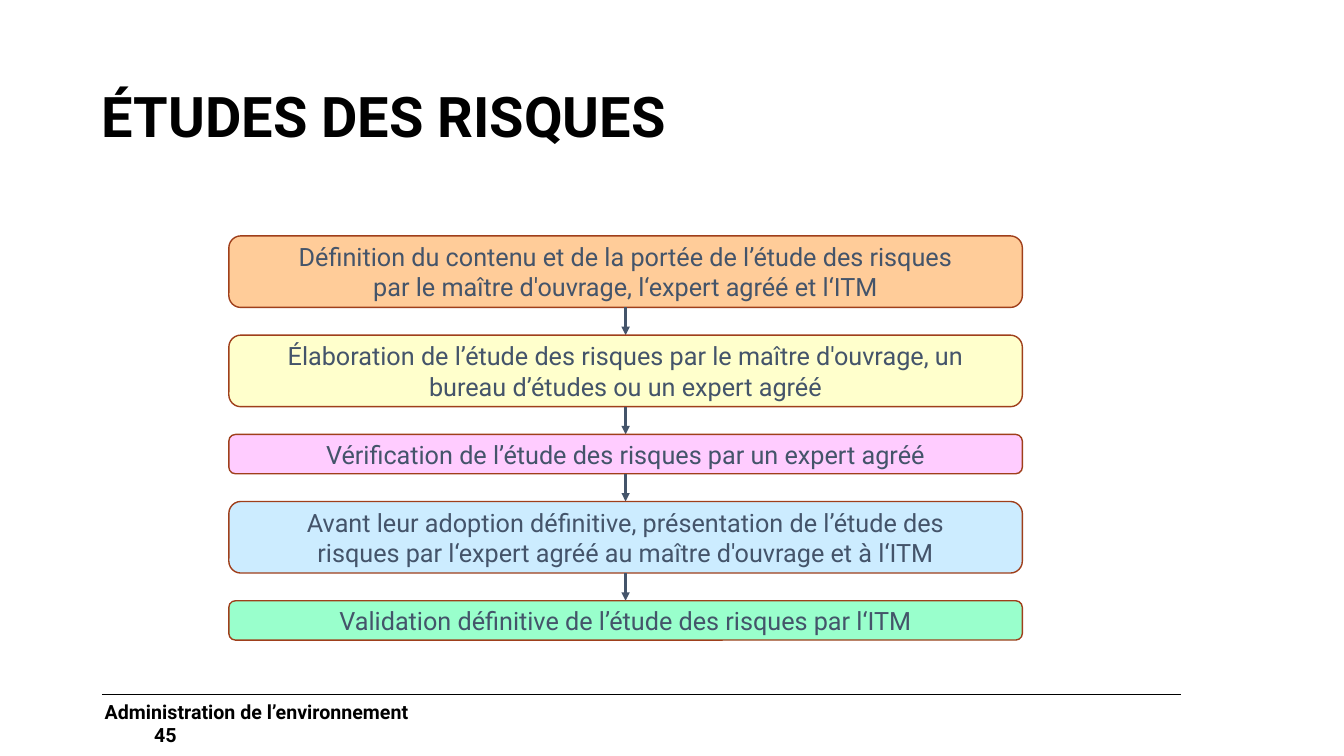
import pptx
import pptx.util
import pptx.dml.color
import pptx.enum.shapes
import pptx.enum.text
import pptx.oxml.ns
import lxml.etree

Inches, Pt = pptx.util.Inches, pptx.util.Pt
RGBColor = pptx.dml.color.RGBColor
qn = pptx.oxml.ns.qn

BLACK = RGBColor(0x00, 0x00, 0x00)
SLATE = RGBColor(0x44, 0x54, 0x6A)
RUST = RGBColor(0x9F, 0x3F, 0x1B)
ORANGE = RGBColor(0xFF, 0xCC, 0x99)
YELLOW = RGBColor(0xFF, 0xFF, 0xCC)
PINK = RGBColor(0xFF, 0xCC, 0xFF)
BLUE = RGBColor(0xCC, 0xEC, 0xFF)
GREEN = RGBColor(0x99, 0xFF, 0xCC)

STEP_LEFT, STEP_WIDTH, STEP_GAP = 2.27, 7.87, 0.275
ONE_LINE, TWO_LINES = 0.39, 0.71
STEPS = [
    ("Définition du contenu et de la portée de l’étude des risques par le maître d'ouvrage, "
     "l‘expert agréé et l‘ITM", ORANGE, TWO_LINES),
    ("Élaboration de l’étude des risques par le maître d'ouvrage, un bureau d’études "
     "ou un expert agréé", YELLOW, TWO_LINES),
    ("Vérification de l’étude des risques par un expert agréé", PINK, ONE_LINE),
    ("Avant leur adoption définitive, présentation de l’étude des risques par l‘expert agréé "
     "au maître d'ouvrage et à l‘ITM", BLUE, TWO_LINES),
    ("Validation définitive de l’étude des risques par l‘ITM", GREEN, ONE_LINE),
]


def style_font(p, size, color, bold=False):
    for r in p.runs:
        r.font.name = "Roboto"
        r.font.size = Pt(size)
        r.font.bold = bold
        r.font.color.rgb = color


def add_line(x1, y1, x2, y2, color, width):
    """Draw a straight line without shadow and return its a:ln element."""
    line = s.shapes.add_connector(pptx.enum.shapes.MSO_CONNECTOR.STRAIGHT,
                                  Inches(x1), Inches(y1), Inches(x2), Inches(y2))
    line.line.color.rgb = color
    line.line.width = Pt(width)
    lxml.etree.SubElement(line._element.spPr, qn("a:effectLst"))
    return line.line._get_or_add_ln()


prs = pptx.Presentation()
prs.slide_width, prs.slide_height = Inches(13.33), Inches(7.5)
s = prs.slides.add_slide(prs.slide_layouts[5])

# Title
title = s.shapes.title
title.left, title.top = Inches(1.01), Inches(0.88)
title.width, title.height = Inches(9.28), Inches(0.78)
tf = title.text_frame
tf.text = "ÉTUDES DES RISQUES"
tf.margin_left = tf.margin_right = tf.margin_top = tf.margin_bottom = 0
tf.vertical_anchor = pptx.enum.text.MSO_ANCHOR.TOP
tf.auto_size = pptx.enum.text.MSO_AUTO_SIZE.NONE
p = tf.paragraphs[0]
p.alignment = pptx.enum.text.PP_ALIGN.LEFT
p.line_spacing = 0.9
style_font(p, 40, BLACK, bold=True)

# Steps, each joined to the one above by an arrow
top = 2.34
for i, (text, color, height) in enumerate(STEPS):
    if i:
        center = STEP_LEFT + STEP_WIDTH / 2
        ln = add_line(center, top - STEP_GAP, center, top, SLATE, 2)
        lxml.etree.SubElement(ln, qn("a:tailEnd"), type="triangle")
    sp = s.shapes.add_shape(pptx.enum.shapes.MSO_SHAPE.ROUNDED_RECTANGLE,
                            Inches(STEP_LEFT), Inches(top), Inches(STEP_WIDTH), Inches(height))
    sp.shadow.inherit = False
    sp.fill.solid()
    sp.fill.fore_color.rgb = color
    sp.line.color.rgb = RUST
    sp.line.width = Pt(1)
    tf = sp.text_frame
    tf.text = text
    tf.word_wrap = True
    tf.margin_left = tf.margin_right = Inches(0.45)
    tf.margin_top = tf.margin_bottom = 0
    tf.vertical_anchor = pptx.enum.text.MSO_ANCHOR.MIDDLE
    p = tf.paragraphs[0]
    p.alignment = pptx.enum.text.PP_ALIGN.CENTER
    style_font(p, 18, SLATE)
    top += height + STEP_GAP

# Footer
add_line(1.01, 6.89, 11.71, 6.89, BLACK, 1)
footer = s.shapes.add_textbox(Inches(0.94), Inches(6.89), Inches(12.39), Inches(0.57))
tf = footer.text_frame
tf.word_wrap = True
tf.text = "Administration de l’environnement"
page_number = tf.add_paragraph()
page_number.text = "45"
page_number._p.get_or_add_pPr().set("marL", str(Inches(0.49)))
for p in tf.paragraphs:
    style_font(p, 14, BLACK, bold=True)

prs.save("out.pptx")
